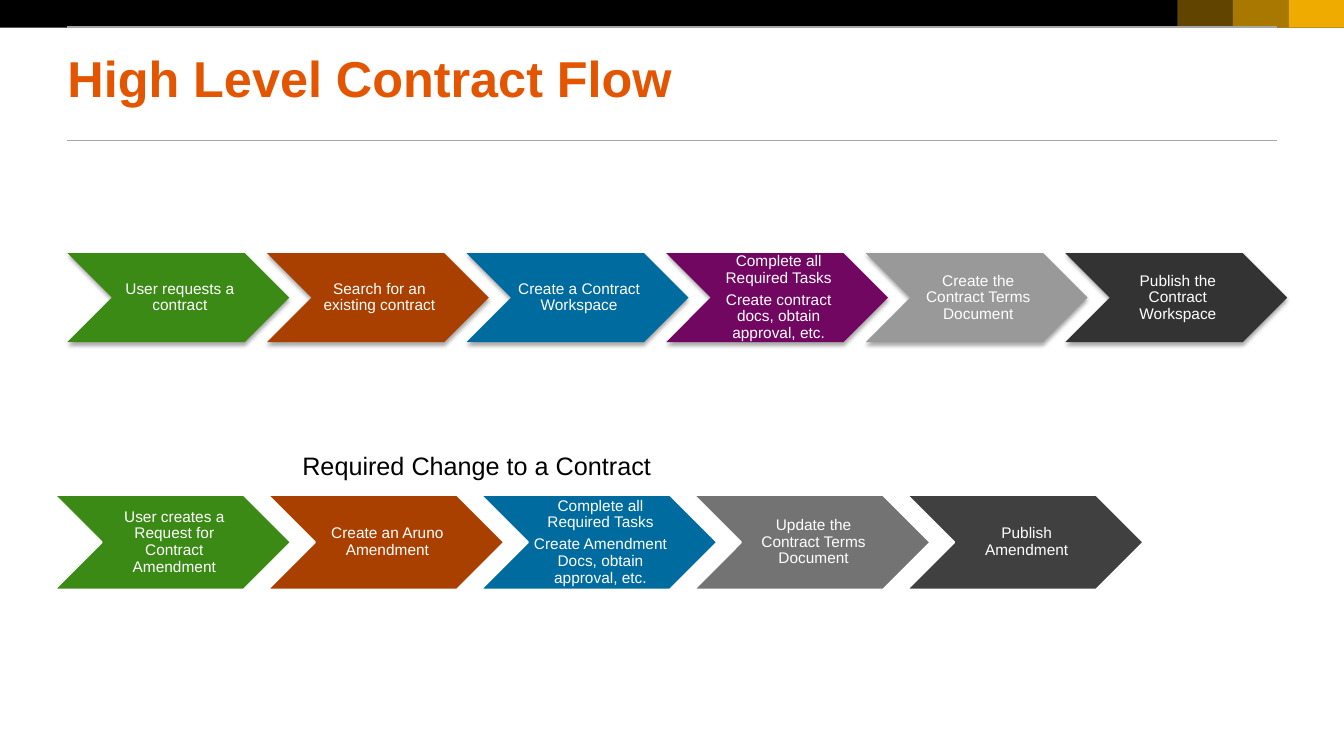
from lxml import etree
from pptx import Presentation, util as u
from pptx.dml.color import RGBColor
from pptx.enum import shapes, text
from pptx.oxml.ns import qn

THEME = {
    "font": "Arial",
    "title_size": u.Pt(36), "heading_size": u.Pt(18), "step_size": u.Pt(11),
    "black": "000000", "white": "FFFFFF", "gold": "F0AB00", "rule": "A6A6A6",
    "title": "E35500", "green": "3B8A15", "rust": "AA4000", "blue": "006B9E",
    "purple": "710761", "light": "999999", "dark": "333333",
    "grey": "737373", "charcoal": "404040",
}


def color(name):
    return RGBColor.from_string(THEME[name])


def write(shape, paragraphs, size, ink, frame_format, paragraph_format, bold=False):
    frame = shape.text_frame
    for name, value in frame_format.items():
        setattr(frame, name, value)
    frame.text = "\n".join(paragraphs)
    for paragraph in frame.paragraphs:
        for name, value in paragraph_format.items():
            setattr(paragraph, name, value)
        font_format = {"name": THEME["font"], "size": THEME[size], "bold": bold}
        for name, value in font_format.items():
            setattr(paragraph.font, name, value)
        paragraph.font.color.rgb = color(ink)


presentation = Presentation()
presentation.slide_width, presentation.slide_height = u.Cm(33.87), u.Cm(19.05)
slide = presentation.slides.add_slide(presentation.slide_layouts[5])

bands = [(0, 33.87, "black", 100), (32.47, 1.4, "gold", 100),
         (31.07, 1.4, "gold", 70), (29.67, 1.4, "gold", 40)]
for left, width, fill, opacity in bands:
    band = slide.shapes.add_shape(
        shapes.MSO_SHAPE.RECTANGLE, u.Cm(left), 0, u.Cm(width), u.Cm(0.7))
    band.shadow.inherit = False
    band.fill.solid()
    band.fill.fore_color.rgb = color(fill)
    band.line.fill.background()
    if opacity < 100:
        tint = band.fill._xPr.find(qn("a:solidFill"))[0]
        etree.SubElement(tint, qn("a:alpha"), val=str(opacity * 1000))

for top in (3.53, 0.68):
    rule = slide.shapes.add_connector(
        shapes.MSO_CONNECTOR.STRAIGHT, u.Cm(32.17), u.Cm(top), u.Cm(1.7), u.Cm(top))
    rule.line.color.rgb = color("rule")
    rule.line.width = u.Pt(0.75)
    etree.SubElement(rule._element.spPr, qn("a:effectLst"))

no_margins = {"margin_left": 0, "margin_top": 0, "margin_right": 0, "margin_bottom": 0}
title = slide.shapes.title
title_place = {"left": u.Cm(1.7), "top": u.Cm(1.19), "width": u.Cm(30.48), "height": u.Cm(1.55)}
for name, value in title_place.items():
    setattr(title, name, value)
write(title, ["High Level Contract Flow"], "title_size", "title",
      {**no_margins, "word_wrap": True, "vertical_anchor": text.MSO_ANCHOR.TOP},
      {"alignment": text.PP_ALIGN.LEFT}, bold=True)

flows = [
    {"left": 1.7, "top": 6.38, "width": 5.59, "height": 2.24, "pitch": 5.03, "shadow": True,
     "steps": [
         ("green", ["User requests a contract"]),
         ("rust", ["Search for an existing contract"]),
         ("blue", ["Create a Contract Workspace"]),
         ("purple", ["Complete all Required Tasks",
                     "Create contract docs, obtain approval, etc."]),
         ("light", ["Create the Contract Terms Document"]),
         ("dark", ["Publish the Contract Workspace"]),
     ]},
    {"left": 1.37, "top": 12.47, "width": 5.97, "height": 2.39, "pitch": 5.37, "shadow": False,
     "steps": [
         ("green", ["User creates a Request for Contract Amendment"]),
         ("rust", ["Create an Aruno Amendment"]),
         ("blue", ["Complete all Required Tasks",
                   "Create Amendment Docs, obtain approval, etc."]),
         ("grey", ["Update the Contract Terms Document"]),
         ("charcoal", ["Publish Amendment"]),
     ]},
]
step_frame = {"margin_left": u.Cm(0.12), "margin_top": u.Cm(0.04),
              "margin_right": u.Cm(0.04), "margin_bottom": u.Cm(0.04),
              "word_wrap": True, "vertical_anchor": text.MSO_ANCHOR.MIDDLE}
step_paragraph = {"alignment": text.PP_ALIGN.CENTER, "line_spacing": 0.9,
                  "space_after": u.Pt(3.85)}

for flow in flows:
    for index, (fill, paragraphs) in enumerate(flow["steps"]):
        step = slide.shapes.add_shape(
            shapes.MSO_SHAPE.CHEVRON, u.Cm(flow["left"] + index * flow["pitch"]),
            u.Cm(flow["top"]), u.Cm(flow["width"]), u.Cm(flow["height"]))
        step.shadow.inherit = False
        step.fill.solid()
        step.fill.fore_color.rgb = color(fill)
        if flow["shadow"]:
            step.line.fill.background()
            effects = step._element.spPr.find(qn("a:effectLst"))
            shadow = etree.SubElement(
                effects, qn("a:outerShdw"), blurRad=str(u.Pt(3)), dist=str(u.Pt(2)),
                dir="5400000", rotWithShape="0")
            shade = etree.SubElement(shadow, qn("a:srgbClr"), val=THEME["black"])
            etree.SubElement(shade, qn("a:alpha"), val="35000")
        else:
            step.line.color.rgb = color("white")
            step.line.width = u.Pt(1.5)
        write(step, paragraphs, "step_size", "white", step_frame, step_paragraph)

heading = slide.shapes.add_textbox(u.Cm(7.37), u.Cm(11.23), u.Cm(9.86), u.Cm(1.02))
write(heading, ["Required Change to a Contract"], "heading_size", "black",
      {"word_wrap": True}, {"alignment": text.PP_ALIGN.LEFT})

presentation.save("out.pptx")
